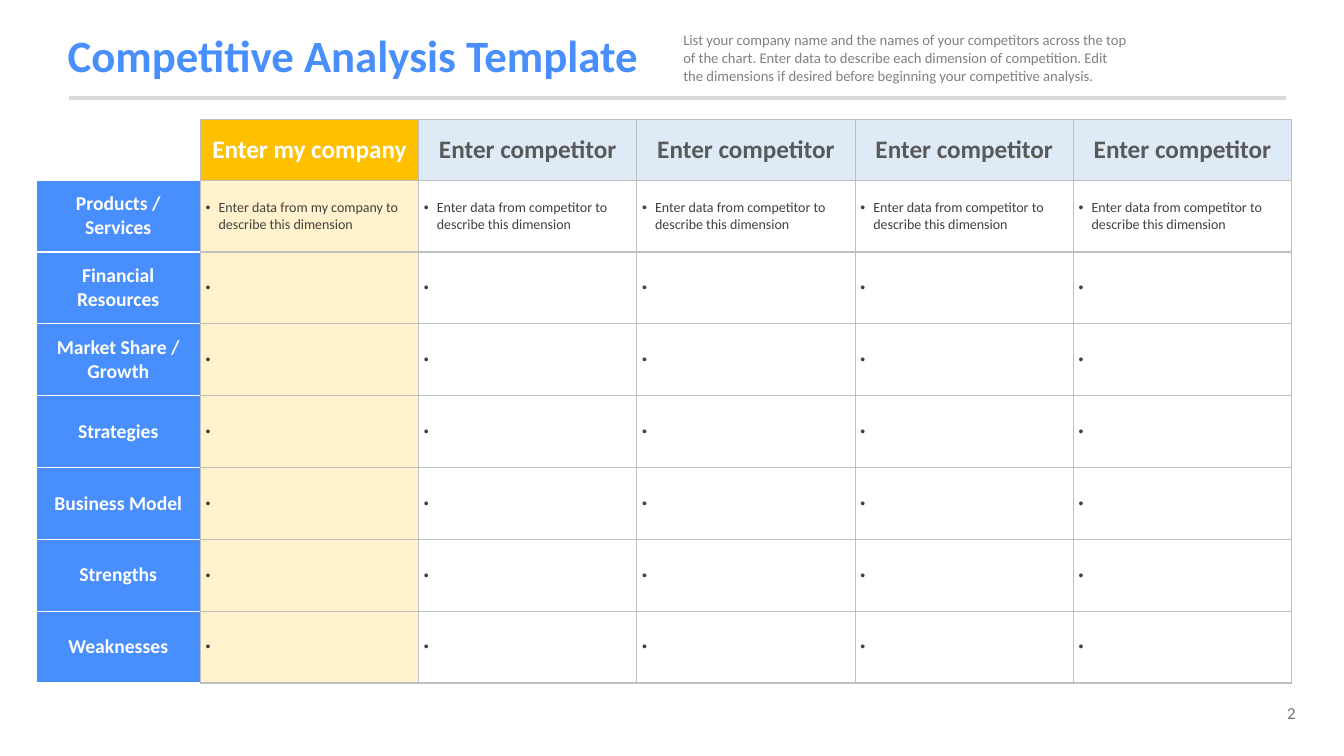
import pptx
import pptx.util
import pptx.dml.color
import pptx.enum.shapes
import pptx.enum.text
import pptx.oxml
import pptx.oxml.ns

Cm, Pt = pptx.util.Cm, pptx.util.Pt
RGBColor = pptx.dml.color.RGBColor
ALIGN = pptx.enum.text.PP_ALIGN
ANCHOR = pptx.enum.text.MSO_ANCHOR

BLUE = RGBColor(0x48, 0x8E, 0xFD)
GOLD = RGBColor(0xFF, 0xC0, 0x00)
PALE_GOLD = RGBColor(0xFF, 0xF2, 0xCC)
PALE_BLUE = RGBColor(0xDE, 0xEB, 0xF7)
WHITE = RGBColor(0xFF, 0xFF, 0xFF)
RULE_GREY = RGBColor(0xD9, 0xD9, 0xD9)
BORDER_GREY = RGBColor(0xBF, 0xBF, 0xBF)
NOTE_GREY = RGBColor(0x80, 0x80, 0x80)
NUMBER_GREY = RGBColor(0x76, 0x71, 0x71)
HEADER_GREY = RGBColor(0x59, 0x59, 0x59)
DATA_GREY = RGBColor(0x40, 0x40, 0x40)


def write(tf, text, size, color, bold=False, align=ALIGN.LEFT):
    p = tf.paragraphs[0]
    p.alignment = align
    r = p.add_run()
    r.text = text
    for name, value in {"name": "Calibri", "size": Pt(size), "bold": bold}.items():
        setattr(r.font, name, value)
    r.font.color.rgb = color
    return p


def add_xml(parent, tag, inner="", **attrs):
    listed = "".join(f' {k}="{v}"' for k, v in attrs.items())
    ns = pptx.oxml.ns.nsdecls("a")
    parent.append(pptx.oxml.parse_xml(f"<a:{tag} {ns}{listed}>{inner}</a:{tag}>"))


prs = pptx.Presentation()
prs.slide_width, prs.slide_height = Cm(33.87), Cm(19.05)
s = prs.slides.add_slide(prs.slide_layouts[5])

# Title
sp = s.shapes.title
for name, value in {"left": 1.45, "top": 0.48, "width": 27.79, "height": 1.96}.items():
    setattr(sp, name, Cm(value))
sp.text_frame.vertical_anchor = ANCHOR.MIDDLE
p = write(sp.text_frame, "Competitive Analysis Template", 32, BLUE, True)
p.line_spacing = 0.9

# Rule under the title
rule = s.shapes.add_connector(pptx.enum.shapes.MSO_CONNECTOR.STRAIGHT,
                              Cm(1.74), Cm(2.47), Cm(32.4), Cm(2.47))
rule.line.color.rgb = RULE_GREY
rule.line.width = Pt(3)
add_xml(rule._element.spPr, "effectLst")

# Instructions and page number
INSTRUCTIONS = ("List your company name and the names of your competitors across the top "
                "of the chart. Enter data to describe each dimension of competition. Edit "
                "the dimensions if desired before beginning your competitive analysis.")
for box, text, size, color, align in [
    ((16.97, 0.66, 11.68, 1.6), INSTRUCTIONS, 10.5, NOTE_GREY, ALIGN.LEFT),
    ((30.3, 17.58, 2.6, 0.77), "2", 12, NUMBER_GREY, ALIGN.RIGHT),
]:
    tf = s.shapes.add_textbox(*map(Cm, box)).text_frame
    tf.word_wrap = True
    tf.auto_size = pptx.enum.text.MSO_AUTO_SIZE.SHAPE_TO_FIT_TEXT
    write(tf, text, size, color, align=align)

# Comparison table
HEADERS = ["Enter my company"] + ["Enter competitor"] * 4
DIMENSIONS = ["Products / Services", "Financial Resources", "Market Share / Growth",
              "Strategies", "Business Model", "Strengths", "Weaknesses"]
table = s.shapes.add_table(len(DIMENSIONS) + 1, len(HEADERS) + 1,
                           Cm(0.91), Cm(3.02), Cm(31.64), Cm(14.19)).table
table.first_row = table.horz_banding = False
for i, column in enumerate(table.columns):
    column.width = Cm(5.5 if i else 4.14)
for i, row in enumerate(table.rows):
    row.height = Cm(1.81 if i else 1.52)

for i in range(len(table.rows)):
    for j in range(len(table.columns)):
        cell = table.cell(i, j)
        cell.vertical_anchor = ANCHOR.MIDDLE
        for side in ("left", "right", "top", "bottom"):
            setattr(cell, f"margin_{side}", Cm(0.13))

        # Borders: white around the label column, grey elsewhere
        for side in ("L", "R", "T", "B"):
            color = BORDER_GREY if j or side == "R" else WHITE
            add_xml(cell._tc.get_or_add_tcPr(), f"ln{side}",
                    f'<a:solidFill><a:srgbClr val="{color}"/></a:solidFill>', w=Pt(1))

        # Fill and text
        if i == j == 0:
            cell.fill.background()
            continue
        cell.fill.solid()
        if i == 0:
            cell.fill.fore_color.rgb = GOLD if j == 1 else PALE_BLUE
            write(cell.text_frame, HEADERS[j - 1], 18,
                  WHITE if j == 1 else HEADER_GREY, True, ALIGN.CENTER)
        elif j == 0:
            cell.fill.fore_color.rgb = BLUE
            write(cell.text_frame, DIMENSIONS[i - 1], 14, WHITE, True, ALIGN.CENTER)
        else:
            cell.fill.fore_color.rgb = PALE_GOLD if j == 1 else WHITE
            source = "my company" if j == 1 else "competitor"
            # A single space keeps the bullet of an unfilled cell visible
            text = f"Enter data from {source} to describe this dimension" if i == 1 else " "
            p = write(cell.text_frame, text, 10, DATA_GREY)
            pPr = p._p.get_or_add_pPr()
            pPr.set("marL", str(Cm(0.33)))
            pPr.set("indent", str(-Cm(0.33)))
            add_xml(pPr, "buFont", typeface="Arial")
            add_xml(pPr, "buChar", char="•")

prs.save("out.pptx")
